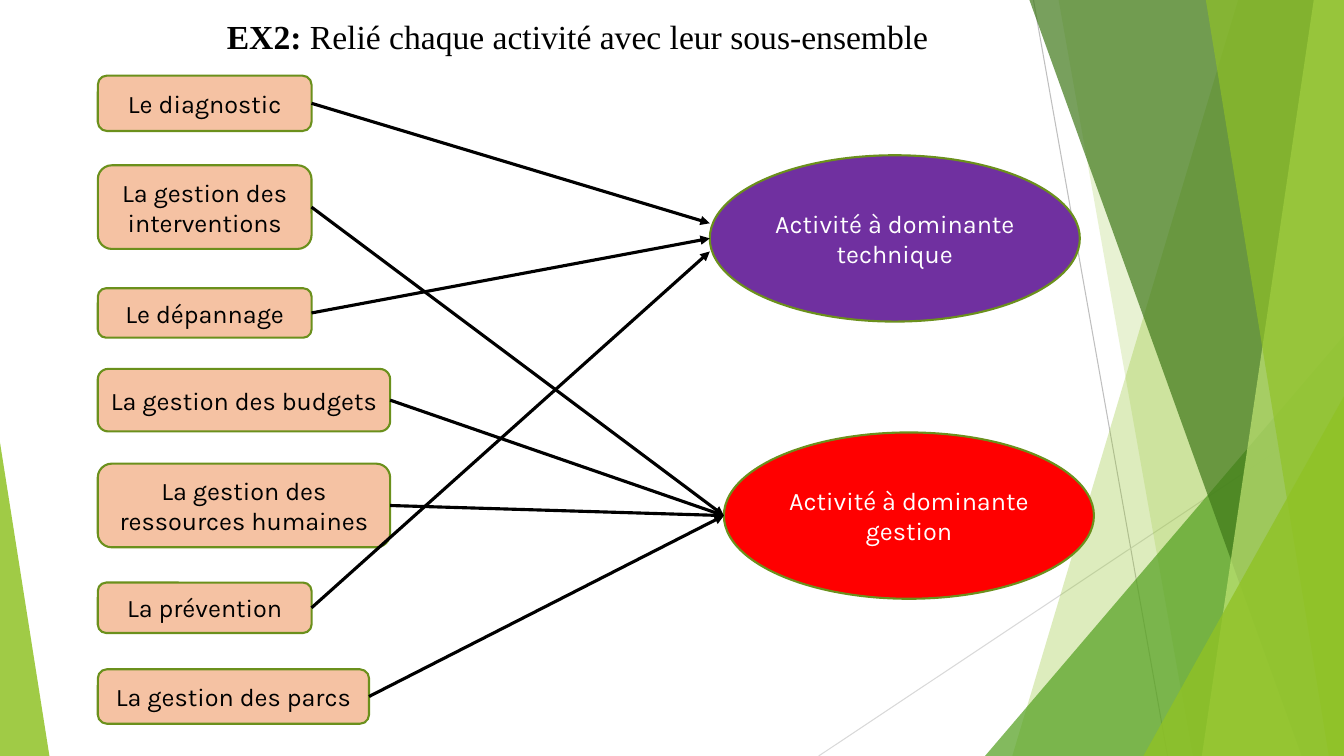
from dataclasses import dataclass

import pptx
import pptx.dml.color
import pptx.enum.shapes
import pptx.enum.text
import pptx.oxml
import pptx.oxml.ns
import pptx.util

SHAPE = pptx.enum.shapes.MSO_SHAPE
ALIGN = pptx.enum.text.PP_ALIGN
ANCHOR = pptx.enum.text.MSO_ANCHOR
COLUMNS, ROWS = 13.33, 7.5


@dataclass(frozen=True)
class Theme:
    ink: str = "000000"
    paper: str = "FFFFFF"
    task: str = "F5C2A3"
    outline: str = "6B901C"
    technical: str = "7030A0"
    management: str = "FF0000"
    lime: str = "90C226"
    leaf: str = "54A021"
    forest: str = "3F7819"
    pale: str = "C0E474"
    ray: str = "BFBFBF"
    faint_ray: str = "D9D9D9"
    title_font: str = "Times New Roman"
    body_font: str = "Karla"
    title_size: int = 24
    body_size: int = 18
    border: float = 1.5
    arrow: float = 2.25
    hairline: float = 0.75


@dataclass(frozen=True)
class Box:
    left: float
    top: float
    width: float
    height: float

    @property
    def right(self):
        return self.left + self.width

    @property
    def bottom(self):
        return self.top + self.height

    @property
    def middle(self):
        return self.top + self.height / 2

    def emu(self):
        return [grid(n) for n in (self.left, self.top, self.width, self.height)]


THEME = Theme()


def grid(cells):
    return pptx.util.Inches(cells)


def rgb(colour):
    return pptx.dml.color.RGBColor.from_string(colour)


def write(paragraph, text, *, font=THEME.body_font, size=THEME.body_size,
          colour=THEME.ink, bold=False, align=ALIGN.CENTER):
    paragraph.alignment = align
    run = paragraph.add_run()
    run.text = text
    run.font.name = font
    run.font.size = pptx.util.Pt(size)
    run.font.bold = bold
    run.font.color.rgb = rgb(colour)


def paint(shape, colour, opacity=100, border=None):
    shape.shadow.inherit = False
    shape.fill.solid()
    shape.fill.fore_color.rgb = rgb(colour)
    if opacity < 100:
        tint = shape.fill._xPr.find(".//" + pptx.oxml.ns.qn("a:srgbClr"))
        alpha = pptx.oxml.parse_xml(
            f'<a:alpha {pptx.oxml.ns.nsdecls("a")} val="{opacity * 1000}"/>')
        tint.append(alpha)
    if border:
        shape.line.color.rgb = rgb(border)
        shape.line.width = pptx.util.Pt(THEME.border)
    else:
        shape.line.fill.background()


def add_line(slide, start, end, colour, width, arrow=False):
    line = slide.shapes.add_connector(
        pptx.enum.shapes.MSO_CONNECTOR.STRAIGHT, *map(grid, (*start, *end)))
    line.line.color.rgb = rgb(colour)
    line.line.width = pptx.util.Pt(width)
    namespace = pptx.oxml.ns.nsdecls("a")
    if arrow:
        line.line._get_or_add_ln().append(
            pptx.oxml.parse_xml(f'<a:tailEnd {namespace} type="triangle"/>'))
    line._element.spPr.append(pptx.oxml.parse_xml(f"<a:effectLst {namespace}/>"))
    return line


def add_label(slide, box, kind, text, fill, colour=THEME.ink):
    label = slide.shapes.add_shape(kind, *box.emu())
    paint(label, fill, border=THEME.outline)
    label.text_frame.word_wrap = True
    label.text_frame.vertical_anchor = ANCHOR.MIDDLE
    write(label.text_frame.paragraphs[0], text, colour=colour)
    return label


def add_band(slide, box, top_left, bottom_left, colour, opacity):
    outline = slide.shapes.build_freeform(
        grid(box.left + top_left), grid(box.top), scale=1.0)
    corners = [(box.right, box.top), (box.right, box.bottom),
               (box.left + bottom_left, box.bottom)]
    outline.add_line_segments([(grid(x), grid(y)) for x, y in corners], close=True)
    paint(outline.convert_to_shape(), colour, opacity)


def add_corner(slide, box, apex, colour, opacity):
    corner = slide.shapes.add_shape(SHAPE.ISOSCELES_TRIANGLE, *box.emu())
    corner.adjustments[0] = apex
    paint(corner, colour, opacity)


def draw_right_facets(slide, box):
    add_line(slide, (box.left + 0.48, box.top), (box.left + 1.81, box.bottom),
             THEME.ray, THEME.hairline)
    add_line(slide, (box.right, box.top + 4.03), (box.left - 1.65, box.bottom),
             THEME.faint_ray, THEME.hairline)

    def corner(width, height, colour, opacity):
        area = Box(box.right - width, box.bottom - height, width, height)
        add_corner(slide, area, 1, colour, opacity)

    add_band(slide, box, 2.51, 0.27, THEME.lime, 30)
    add_band(slide, box, 0.73, 2.06, THEME.lime, 20)
    corner(3.56, 4.17, THEME.leaf, 72)
    add_band(slide, box, 0.44, 3.14, THEME.forest, 70)
    add_band(slide, box, 3.26, 2.15, THEME.pale, 70)
    add_band(slide, box, 2.19, 3.41, THEME.lime, 65)
    corner(1.99, 3.57, THEME.lime, 80)


def draw_title(slide, box):
    title = slide.shapes.title
    title.left, title.top, title.width, title.height = box.emu()
    frame = title.text_frame
    frame.word_wrap = False
    frame.auto_size = pptx.enum.text.MSO_AUTO_SIZE.SHAPE_TO_FIT_TEXT
    frame.vertical_anchor = ANCHOR.TOP
    heading = frame.paragraphs[0]
    heading.line_spacing = 1.15
    for text, bold in (("EX2: ", True),
                       ("Relié chaque activité avec leur sous-ensemble", False)):
        write(heading, text, font=THEME.title_font, size=THEME.title_size,
              bold=bold, align=ALIGN.LEFT)


def draw_matching(slide, box):
    short, medium, wide = 2.12, 2.69, 2.9
    technical, management = "technique", "gestion"
    tasks = [
        ("Le diagnostic", 0, short, 0.55, technical, -0.15),
        ("La gestion des interventions", 0.89, short, 0.83, management, 0),
        ("Le dépannage", 2.11, short, 0.49, technical, 0),
        ("La gestion des budgets", 2.91, wide, 0.62, management, 0),
        ("La gestion des ressources humaines", 3.85, wide, 0.83, management, 0),
        ("La prévention", 5.03, short, 0.5, technical, 0.13),
        ("La gestion des parcs", 5.89, medium, 0.54, management, 0),
    ]
    families = {
        technical: (Box(box.left + 6.07, box.top + 0.79, 3.67, 1.65), THEME.technical),
        management: (Box(box.left + 6.21, box.top + 3.54, 3.67, 1.65), THEME.management),
    }
    links = []
    for text, top, width, height, family, shift in tasks:
        area = Box(box.left, box.top + top, width, height)
        task = add_label(slide, area, SHAPE.ROUNDED_RECTANGLE, text, THEME.task)
        links.append((task, area, family, shift))
    for family, (area, colour) in families.items():
        add_label(slide, area, SHAPE.OVAL, f"Activité à dominante {family}",
                  colour, THEME.paper)
    for task, area, family, shift in links:
        target = families[family][0]
        link = add_line(slide, (area.right, area.middle),
                        (target.left, target.middle + shift),
                        THEME.ink, THEME.arrow, arrow=True)
        link.begin_connect(task, 3)


def main():
    deck = pptx.Presentation()
    deck.slide_width, deck.slide_height = grid(COLUMNS), grid(ROWS)
    slide = deck.slides.add_slide(deck.slide_layouts[5])
    draw_right_facets(slide, Box(9.77, 0, COLUMNS - 9.77, ROWS))
    add_corner(slide, Box(0, 4.39, 0.49, ROWS - 4.39), 0, THEME.lime, 85)
    draw_title(slide, Box(2.15, 0.05, 7.22, 0.54))
    draw_matching(slide, Box(0.97, 0.75, 9.88, 6.43))
    deck.save("out.pptx")


if __name__ == "__main__":
    main()
